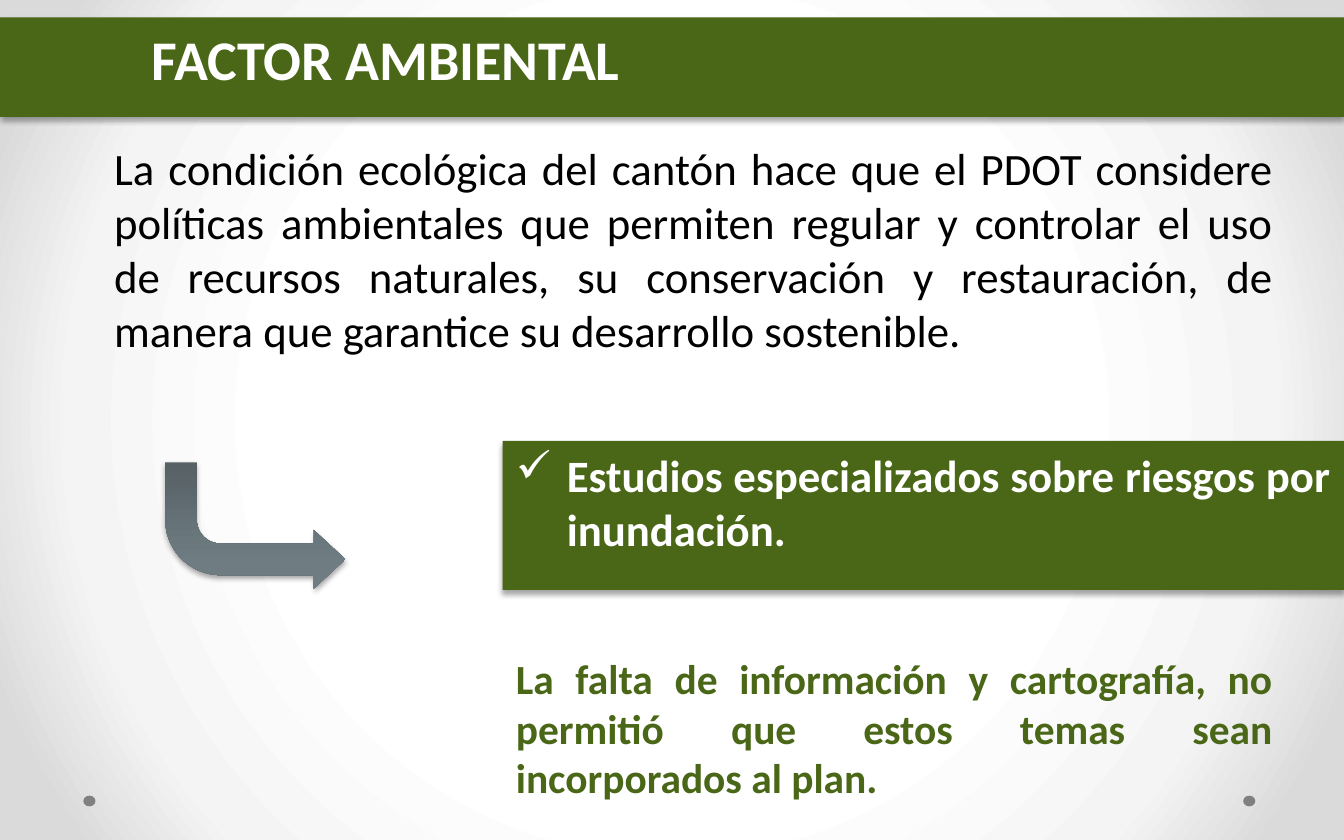
from lxml.etree import SubElement
from pptx import Presentation
from pptx.dml.color import RGBColor
from pptx.enum.shapes import MSO_SHAPE
from pptx.enum.text import MSO_ANCHOR, PP_ALIGN
from pptx.oxml.ns import qn
from pptx.util import Pt

PX = 9144
GREEN = RGBColor(0x4A, 0x67, 0x17)
GRAY = RGBColor(0x80, 0x80, 0x80)
WHITE = RGBColor(0xFF, 0xFF, 0xFF)
BLACK = RGBColor(0x00, 0x00, 0x00)

BACKGROUND_STOPS = [(50, WHITE), (76, RGBColor(0xF4, 0xF4, 0xF4)), (92, RGBColor(0xDA, 0xDA, 0xDA))]
ARROW_STOPS = [
    (0, RGBColor(0x56, 0x60, 0x65)),
    (80, RGBColor(0x6F, 0x7D, 0x83)),
    (100, RGBColor(0x6F, 0x7E, 0x84)),
]
ARROW_BOX = (123, 344, 134, 94)
ARROW_ADJUSTMENTS = (0.25, 0.232, 0.25, 0.438)
DOT_LEFTS = (62, 925)
DOT_TOP, DOT_WIDTH, DOT_HEIGHT = 592, 9, 8

BANDS = [
    ((0, 13, 1000, 74), "FACTOR AMBIENTAL", dict(size=30, bold=True, inset=113)),
    (
        (374, 328, 626, 111),
        "Estudios especializados sobre riesgos por inundación.",
        dict(size=24, bold=True, bullet="✓", indent=38),
    ),
]
TEXTS = [
    (
        (75, 100, 882, 220),
        "La condición ecológica del cantón hace que el PDOT considere políticas ambientales "
        "que permiten regular y controlar el uso de recursos naturales, su conservación y "
        "restauración, de manera que garantice su desarrollo sostenible.",
        dict(size=24, color=BLACK),
    ),
    (
        (374, 481, 583, 116),
        "La falta de información y cartografía, no permitió que estos temas sean "
        "incorporados al plan.",
        dict(size=22.2, color=GREEN, bold=True),
    ),
]


def scaled(box):
    return [length * PX for length in box]


def set_gradient(fill, element, stops):
    fill.gradient()
    gradient = next(element.iter(qn("a:gradFill")))
    for child in list(gradient):
        gradient.remove(child)
    gradient.set("rotWithShape", "1")
    stop_list = SubElement(gradient, qn("a:gsLst"))
    for position, color in stops:
        stop = SubElement(stop_list, qn("a:gs"), pos=str(position * 1000))
        SubElement(stop, qn("a:srgbClr"), val=str(color))
    return gradient


def add_shadow(shape):
    effects = shape.element.spPr.find(qn("a:effectLst"))
    shadow = SubElement(
        effects, qn("a:outerShdw"), blurRad=str(Pt(3.1)), dist=str(Pt(1.8)),
        dir="5400000", rotWithShape="0",
    )
    color = SubElement(shadow, qn("a:srgbClr"), val=str(BLACK))
    SubElement(color, qn("a:alpha"), val="35000")


def add_shape(slide, kind, box, color=None):
    shape = slide.shapes.add_shape(kind, *scaled(box))
    shape.shadow.inherit = False
    shape.line.fill.background()
    if color is not None:
        shape.fill.solid()
        shape.fill.fore_color.rgb = color
    return shape


def write_text(shape, text, size, color=WHITE, bold=False, inset=10, bullet=None, indent=0):
    frame = shape.text_frame
    frame.word_wrap = True
    frame.vertical_anchor = MSO_ANCHOR.TOP
    frame.margin_left = inset * PX
    paragraph = frame.paragraphs[0]
    paragraph.alignment = PP_ALIGN.JUSTIFY
    run = paragraph.add_run()
    run.text = text
    run.font.name = "Calibri"
    run.font.size = Pt(size)
    run.font.bold = bold
    run.font.color.rgb = color
    if bullet:
        properties = paragraph._p.get_or_add_pPr()
        properties.set("marL", str(indent * PX))
        properties.set("indent", str(-indent * PX))
        SubElement(properties, qn("a:buChar"), char=bullet)


def main():
    presentation = Presentation()
    presentation.slide_width, presentation.slide_height = 1000 * PX, 625 * PX
    slide = presentation.slides.add_slide(presentation.slide_layouts[6])

    gradient = set_gradient(slide.background.fill, slide.element, BACKGROUND_STOPS)
    circle = SubElement(gradient, qn("a:path"), path="circle")
    SubElement(circle, qn("a:fillToRect"), l="50000", t="50000", r="50000", b="50000")

    for left in DOT_LEFTS:
        add_shape(slide, MSO_SHAPE.OVAL, (left, DOT_TOP, DOT_WIDTH, DOT_HEIGHT), GRAY)

    for box, text, style in BANDS:
        band = add_shape(slide, MSO_SHAPE.RECTANGLE, box, GREEN)
        add_shadow(band)
        write_text(band, text, **style)

    for box, text, style in TEXTS:
        write_text(slide.shapes.add_textbox(*scaled(box)), text, **style)

    arrow = add_shape(slide, MSO_SHAPE.BENT_ARROW, ARROW_BOX)
    for index, value in enumerate(ARROW_ADJUSTMENTS):
        arrow.adjustments[index] = value
    arrow.element.spPr.xfrm.set("flipV", "1")
    gradient = set_gradient(arrow.fill, arrow.element, ARROW_STOPS)
    SubElement(gradient, qn("a:lin"), ang="16200000", scaled="0")
    add_shadow(arrow)

    presentation.save("out.pptx")


if __name__ == "__main__":
    main()
